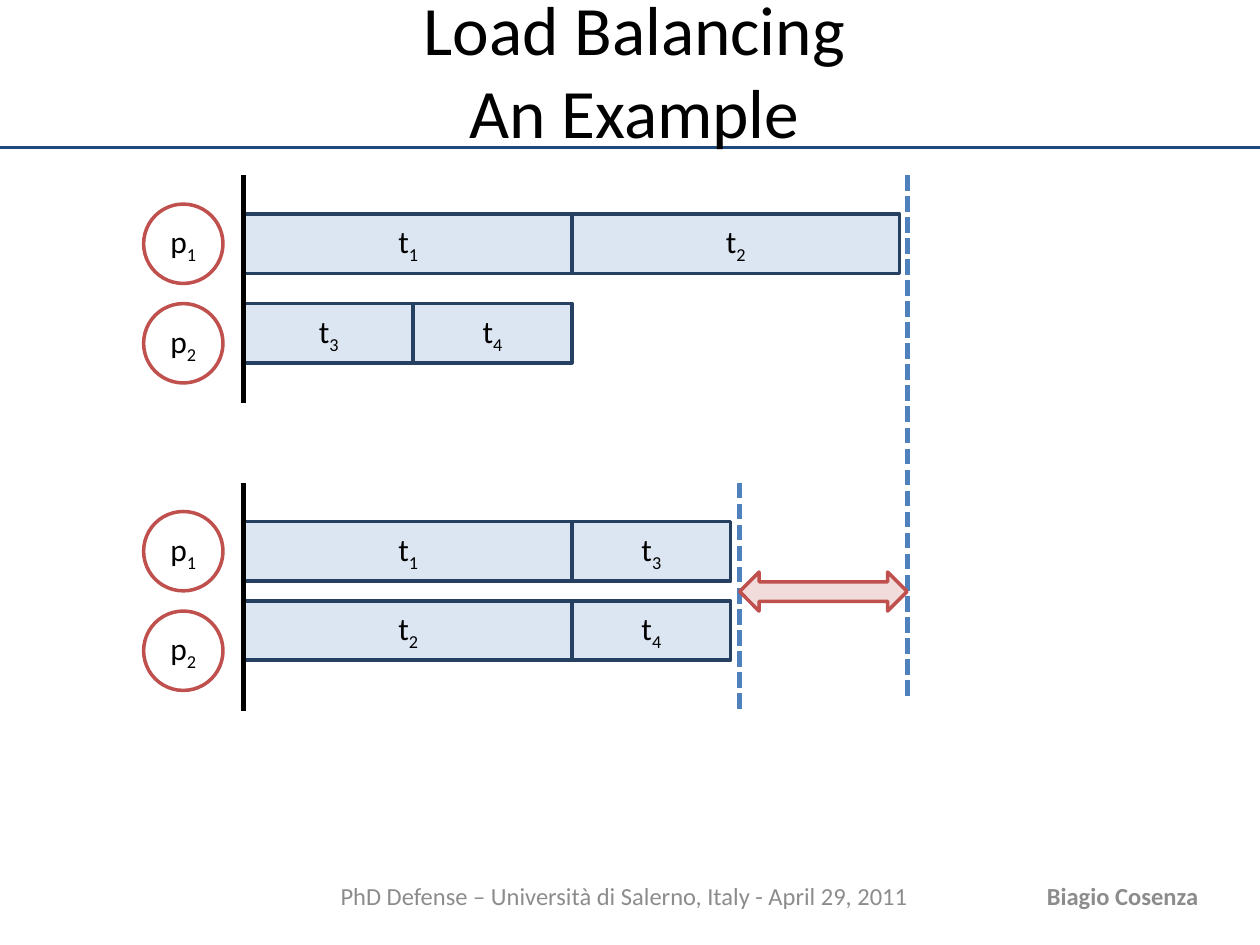
import pptx
import pptx.dml.color
import pptx.enum.dml
import pptx.enum.shapes
import pptx.enum.text
import pptx.oxml
import pptx.oxml.ns
import pptx.util
from pptx.util import Inches

COLORS = {
    "text": "000000", "footer": "8C8C8C", "rule": "1F497D", "axis": "000000",
    "finish": "4F81BD", "task": "DCE6F2", "task_edge": "254061",
    "processor": "FFFFFF", "accent": "C0504D", "gain": "F2DCDB",
}
FONT = "Calibri"
SHAPES = pptx.enum.shapes.MSO_SHAPE
MIDDLE = pptx.enum.text.MSO_ANCHOR.MIDDLE
CENTER = pptx.enum.text.PP_ALIGN.CENTER
LONG, MEDIUM, SHORT = 2.6, 1.34, 1.26
TASK_HEIGHT, PROCESSOR_SIZE, AXIS_HEIGHT = 0.47, 0.63, 1.81


def rgb(name):
    return pptx.dml.color.RGBColor.from_string(COLORS[name])


def add_run(paragraph, text, size, color="text", bold=False):
    run = paragraph.add_run()
    run.text = text
    run.font.name = FONT
    run.font.size = pptx.util.Pt(size)
    run.font.bold = bold
    run.font.color.rgb = rgb(color)
    return run


def add_line(slide, x1, y1, x2, y2, color, width, dashed=False):
    line = slide.shapes.add_connector(
        pptx.enum.shapes.MSO_CONNECTOR.STRAIGHT,
        Inches(x1), Inches(y1), Inches(x2), Inches(y2))
    line.line.color.rgb = rgb(color)
    line.line.width = pptx.util.Pt(width)
    if dashed:
        line.line.dash_style = pptx.enum.dml.MSO_LINE.SQUARE_DOT
        dash = line.line._ln.find(pptx.oxml.ns.qn("a:prstDash"))
        dash.set("val", "sysDash")
    line._element.spPr.append(pptx.oxml.parse_xml(
        f"<a:effectLst {pptx.oxml.ns.nsdecls('a')}/>"))
    return line


def add_block(slide, kind, left, top, width, height, fill, edge, label=""):
    """Add an outlined shape; a label is a letter and its subscript index."""
    block = slide.shapes.add_shape(
        kind, Inches(left), Inches(top), Inches(width), Inches(height))
    block.shadow.inherit = False
    block.fill.solid()
    block.fill.fore_color.rgb = rgb(fill)
    block.line.color.rgb = rgb(edge)
    block.line.width = pptx.util.Pt(2)
    if label:
        block.text_frame.vertical_anchor = MIDDLE
        paragraph = block.text_frame.paragraphs[0]
        paragraph.alignment = CENTER
        add_run(paragraph, label[0], 18)
        index = add_run(paragraph, label[1:], 18)
        index.font._element.set("baseline", "-25000")


def add_title(slide, left, top, width, height):
    title = slide.shapes.title
    title.left, title.top = Inches(left), Inches(top)
    title.width, title.height = Inches(width), Inches(height)
    frame = title.text_frame
    frame.auto_size = pptx.enum.text.MSO_AUTO_SIZE.NONE
    frame.vertical_anchor = MIDDLE
    heading = frame.paragraphs[0]
    heading.alignment = CENTER
    add_run(heading, "Load Balancing", 39.6)
    heading.add_line_break()
    add_run(heading, "An Example", 39.6)


def add_header_rule(slide, top):
    """Draw the rule across the slide, behind the title."""
    rule = add_line(slide, 0, top, 10, top, "rule", 2)
    slide.shapes._spTree.insert(2, rule._element)


def add_footer(slide, left, top, width, height, text, bold=False):
    box = slide.shapes.add_textbox(
        Inches(left), Inches(top), Inches(width), Inches(height))
    box.text_frame.word_wrap = True
    box.text_frame.vertical_anchor = MIDDLE
    paragraph = box.text_frame.paragraphs[0]
    paragraph.alignment = CENTER
    add_run(paragraph, text, 14, "footer", bold)


def add_schedule(slide, left, top, rows):
    """Draw processors, their task bars and the time axis.

    Each row holds the offset of its bar from the top and its tasks.
    """
    axis = left + 0.79
    for number, (offset, tasks) in enumerate(rows, 1):
        add_block(slide, SHAPES.OVAL, left, top + 0.23 + 0.79 * (number - 1),
                  PROCESSOR_SIZE, PROCESSOR_SIZE, "processor", "accent", f"p{number}")
        start = axis + 0.01
        for label, duration in tasks:
            add_block(slide, SHAPES.RECTANGLE, start, top + offset,
                      duration, TASK_HEIGHT, "task", "task_edge", label)
            start += duration
    add_line(slide, axis, top, axis, top + AXIS_HEIGHT, "axis", 3)


def add_time_gain(slide, early, late, top, early_top, bottom):
    """Mark both finish times and the time saved between them."""
    add_line(slide, late, top, late, bottom - 0.08, "finish", 3, dashed=True)
    add_line(slide, early, early_top, early, bottom, "finish", 3, dashed=True)
    add_block(slide, SHAPES.LEFT_RIGHT_ARROW, early, early_top + 0.71,
              late - early, 0.31, "gain", "accent")


def main():
    deck = pptx.Presentation()
    deck.slide_width, deck.slide_height = Inches(10), Inches(7.5)
    slide = deck.slides.add_slide(deck.slide_layouts.get_by_name("Title Only"))

    add_title(slide, 0.5, 0.08, 9.07, 0.94)
    add_header_rule(slide, 1.17)
    add_footer(slide, 2.17, 6.95, 5.57, 0.32,
               "PhD Defense – Università di Salerno, Italy - April 29, 2011")
    add_footer(slide, 7.27, 6.95, 3.28, 0.32, "Biagio Cosenza", bold=True)

    unbalanced_top, balanced_top = 1.39, 3.83
    add_schedule(slide, 1.14, unbalanced_top, [
        (0.31, [("t1", LONG), ("t2", LONG)]),
        (1.02, [("t3", MEDIUM), ("t4", SHORT)]),
    ])
    add_schedule(slide, 1.14, balanced_top, [
        (0.31, [("t1", LONG), ("t3", SHORT)]),
        (0.94, [("t2", LONG), ("t4", SHORT)]),
    ])
    add_time_gain(slide, 5.87, 7.2, unbalanced_top, balanced_top,
                  balanced_top + AXIS_HEIGHT)
    deck.save("out.pptx")


if __name__ == "__main__":
    main()
